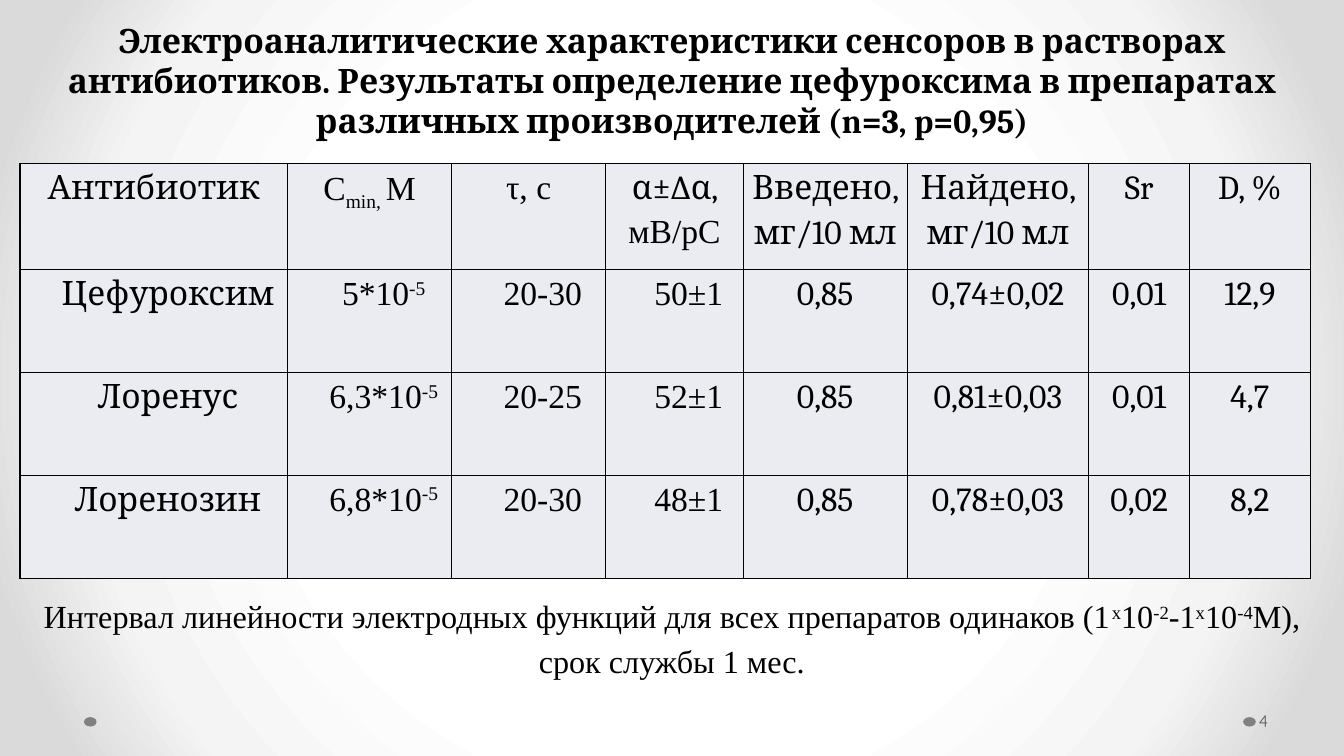
from dataclasses import dataclass

from lxml import etree
from pptx import Presentation
from pptx import util as u
from pptx.dml.color import RGBColor
from pptx.enum import shapes, text
from pptx.oxml import parse_xml
from pptx.oxml.ns import nsdecls, qn

PX = 9525


@dataclass(frozen=True)
class Theme:
    ink: str = "000000"
    cell: str = "EAECF2"
    dot: str = "808080"
    number: str = "595959"
    glow: tuple = ((50, "FFFFFF"), (76, "F4F4F4"), (92, "DADADA"))
    serif: str = "Cambria"
    roman: str = "Times New Roman"
    sans: str = "Quicksand"
    large: int = 24
    note: int = 23
    small: int = 12


THEME = Theme()
SUB, SUPER = -25000, 30000
COLUMNS = [255, 156, 147, 131, 156, 173, 96, 115]
ROWS = [101, 98, 98, 98]
ROMAN_COLUMNS = (1, 2, 3)
INDENTED_COLUMNS = 4
HEADINGS = [
    "Антибиотик",
    [("С", 0), ("min, ", SUB), ("M", 0)],
    "τ, с",
    [("α±∆α, ", 0, THEME.serif), ("мВ/pC", 0)],
    "Введено, мг/10 мл",
    "Найдено, мг/10 мл",
    "Sr",
    "D, %",
]
RESULTS = [
    ("Цефуроксим", "5*10", "20-30", "50±1", "0,85", "0,74±0,02", "0,01", "12,9"),
    ("Лоренус", "6,3*10", "20-25", "52±1", "0,85", "0,81±0,03", "0,01", "4,7"),
    ("Лоренозин", "6,8*10", "20-30", "48±1", "0,85", "0,78±0,03", "0,02", "8,2"),
]
TITLE = ("Электроаналитические характеристики сенсоров в растворах антибиотиков. "
         "Результаты определение цефуроксима в препаратах различных производителей "
         "(n=3, p=0,95)")
NOTE = [
    ("Интервал линейности электродных функций для всех препаратов одинаков (1", 0),
    ("х", SUPER), ("10", 0), ("-2", SUPER), ("-1", 0),
    ("х", SUPER), ("10", 0), ("-4", SUPER), ("М), срок службы 1 мес.", 0),
]


def emu(box):
    return [side * PX for side in box]


def write(paragraph, content, font, size, color=THEME.ink, bold=False,
          align=text.PP_ALIGN.CENTER, spacing=1.0, indent=0):
    paragraph.alignment = align
    paragraph.line_spacing = spacing
    paragraph.font.name = font
    paragraph.font.size = u.Pt(size)
    paragraph.font.bold = bold
    paragraph.font.color.rgb = RGBColor.from_string(color)
    if indent:
        paragraph._p.get_or_add_pPr().set("indent", str(indent * PX))
    pieces = [(content, 0)] if isinstance(content, str) else content
    for words, baseline, *own_font in pieces:
        run = paragraph.add_run()
        run.text = words
        if baseline:
            run._r.get_or_add_rPr().set("baseline", str(baseline))
        if own_font:
            run.font.name = own_font[0]


def paint_background(slide):
    stops = "".join(f'<a:gs pos="{at * 1000}"><a:srgbClr val="{color}"/></a:gs>'
                    for at, color in THEME.glow)
    slide.background.fill.solid()
    properties = slide._element.cSld.find(qn("p:bg")).find(qn("p:bgPr"))
    properties.replace(properties[0], parse_xml(
        f'<a:gradFill {nsdecls("a")} rotWithShape="1"><a:gsLst>{stops}</a:gsLst>'
        '<a:path path="circle"><a:fillToRect l="50000" t="50000" r="50000" b="50000"/>'
        '</a:path></a:gradFill>'))


def place_title(slide, box):
    title = slide.shapes.title
    title.left, title.top, title.width, title.height = emu(box)
    frame = title.text_frame
    frame.auto_size = text.MSO_AUTO_SIZE.NONE
    frame.vertical_anchor = text.MSO_ANCHOR.TOP
    write(frame.paragraphs[0], TITLE, THEME.serif, THEME.large, bold=True)


def format_cell(cell):
    cell.margin_left = cell.margin_right = 7 * PX
    cell.margin_top = cell.margin_bottom = 0
    cell.fill.solid()
    cell.fill.fore_color.rgb = RGBColor.from_string(THEME.cell)
    properties = cell._tc.get_or_add_tcPr()
    for order, side in enumerate(("lnL", "lnR", "lnT", "lnB")):
        border = etree.Element(qn(f"a:{side}"), w=str(u.Pt(1)))
        fill = etree.SubElement(border, qn("a:solidFill"))
        etree.SubElement(fill, qn("a:srgbClr"), val=THEME.ink)
        properties.insert(order, border)


def place_results(slide, left, top):
    box = emu((left, top, sum(COLUMNS), sum(ROWS)))
    table = slide.shapes.add_table(len(ROWS), len(COLUMNS), *box).table
    table.first_row = table.horz_banding = False
    for column, width in zip(table.columns, COLUMNS):
        column.width = width * PX
    for row, height in zip(table.rows, ROWS):
        row.height = height * PX
    for r, values in enumerate([HEADINGS, *RESULTS]):
        for c, value in enumerate(values):
            cell = table.cell(r, c)
            format_cell(cell)
            content = [(value, 0), ("-5", SUPER)] if r and c == 1 else value
            write(cell.text_frame.paragraphs[0], content,
                  THEME.roman if c in ROMAN_COLUMNS else THEME.serif, THEME.large,
                  spacing=1.15, indent=27 if r and c < INDENTED_COLUMNS else 0)


def place_note(slide, box):
    frame = slide.shapes.add_textbox(*emu(box)).text_frame
    frame.word_wrap = True
    write(frame.paragraphs[0], NOTE, THEME.roman, THEME.note, spacing=1.15)


def place_footer(slide, box):
    left, top, width, height = box
    for dot_left in (80, left):
        dot = slide.shapes.add_shape(shapes.MSO_SHAPE.OVAL, *emu((dot_left, top + 16, 12, 9)))
        dot.shadow.inherit = False
        dot.fill.solid()
        dot.fill.fore_color.rgb = RGBColor.from_string(THEME.dot)
        dot.line.fill.background()
    frame = slide.shapes.add_textbox(*emu((left + 12, top, width - 12, height))).text_frame
    frame.word_wrap = True
    frame.margin_left = 3 * PX
    frame.margin_right = 5 * PX
    frame.vertical_anchor = text.MSO_ANCHOR.MIDDLE
    write(frame.paragraphs[0], "4", THEME.sans, THEME.small, THEME.number,
          align=text.PP_ALIGN.LEFT)


def main():
    deck = Presentation()
    deck.slide_width, deck.slide_height = emu((1280, 720))
    slide = deck.slides.add_slide(deck.slide_layouts[5])
    paint_background(slide)
    place_title(slide, (0, 14, 1280, 126))
    place_results(slide, 19, 156)
    place_note(slide, (0, 558, 1280, 95))
    place_footer(slide, (1184, 667, 91, 38))
    deck.save("out.pptx")


if __name__ == "__main__":
    main()
